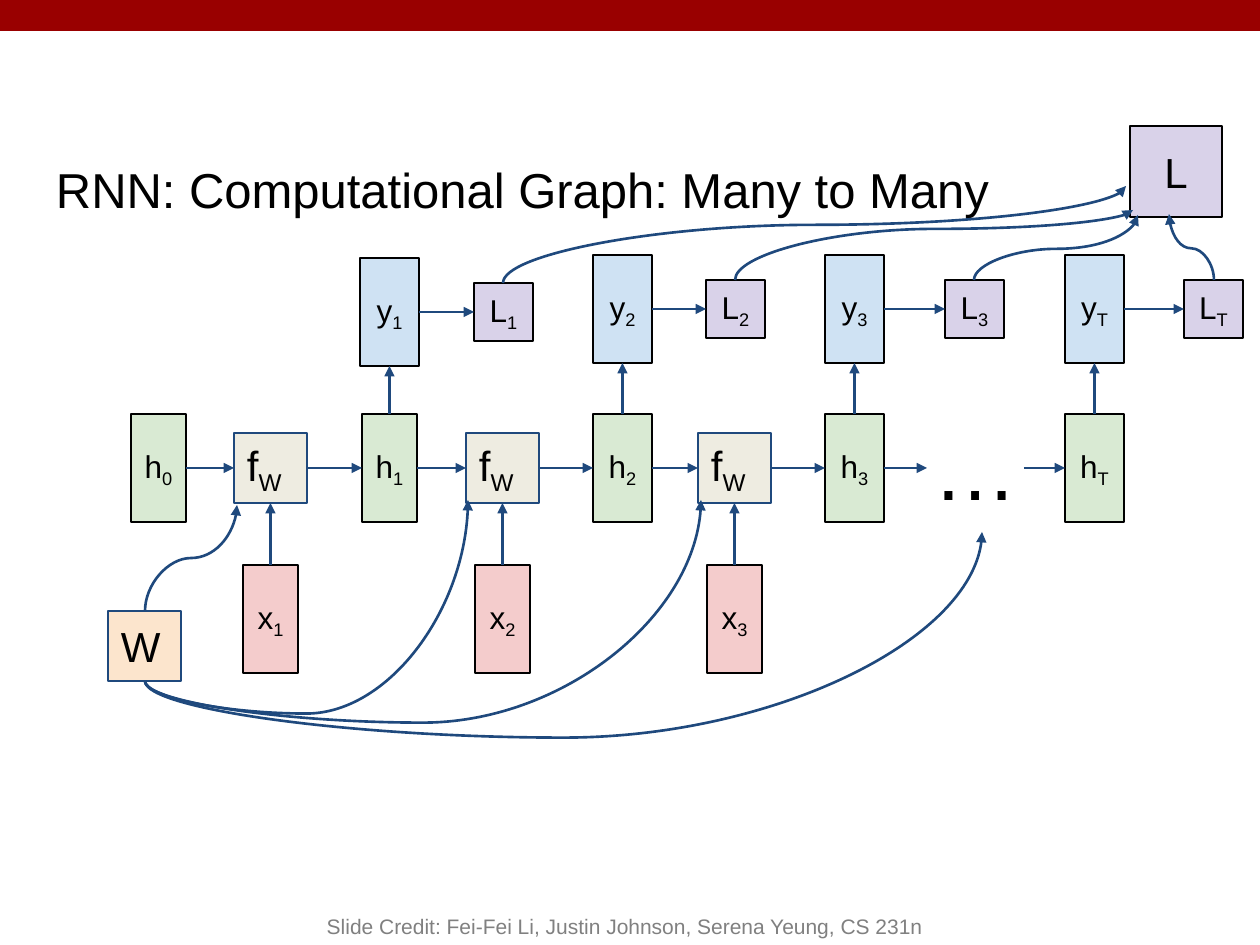
"""Build the many-to-many RNN computational graph slide."""
from lxml.etree import SubElement
from pptx import Presentation
from pptx.dml.color import RGBColor
from pptx.enum.shapes import MSO_CONNECTOR, MSO_SHAPE
from pptx.enum.text import MSO_ANCHOR, PP_ALIGN
from pptx.oxml.ns import qn
from pptx.util import Emu, Pt

PX = 914400 / 126
COLORS = {
    "banner": "990000", "hidden": "D9EAD3", "function": "EEECE1",
    "input": "F4CCCC", "output": "CFE2F3", "loss": "D9D2E9",
    "weight": "FCE5CD", "blue": "1F497D", "black": "000000", "gray": "808080",
}
COLORS = {name: RGBColor.from_string(value) for name, value in COLORS.items()}


def add_box(bounds, text, size, subscript="", fill=None, line="black", color="black",
            align=PP_ALIGN.CENTER, anchor=MSO_ANCHOR.MIDDLE, margin=13):
    place = [Emu(value * PX) for value in bounds]
    if fill:
        shape = slide.shapes.add_shape(MSO_SHAPE.RECTANGLE, *place)
        shape.shadow.inherit = False
        shape.fill.solid()
        shape.fill.fore_color.rgb = COLORS[fill]
        shape.line.color.rgb = COLORS[line]
        shape.line.width = Pt(0.75)
    else:
        shape = slide.shapes.add_textbox(*place)
    side = Emu(0 if align == PP_ALIGN.CENTER else margin * PX)
    edge = Emu(margin * PX)
    frame_format = {"word_wrap": True, "vertical_anchor": anchor, "margin_left": side,
                    "margin_right": side, "margin_top": edge, "margin_bottom": edge}
    for name, value in frame_format.items():
        setattr(shape.text_frame, name, value)
    paragraph = shape.text_frame.paragraphs[0]
    paragraph.alignment = align
    for part in filter(None, (text, subscript)):
        run = paragraph.add_run()
        run.text = part
        for name, value in {"name": "Arial", "size": Pt(size)}.items():
            setattr(run.font, name, value)
        run.font.color.rgb = COLORS[color]
    if subscript:
        run._r.get_or_add_rPr().set("baseline", "-25000")
    return shape


def add_arrow(kind, begin_x, begin_y, end_x, end_y):
    ends = [Emu(value * PX) for value in (begin_x, begin_y, end_x, end_y)]
    connector = slide.shapes.add_connector(kind, *ends)
    connector.line.color.rgb = COLORS["blue"]
    connector.line.width = Pt(1.5)
    SubElement(connector.line._get_or_add_ln(), qn("a:tailEnd"), type="triangle")
    SubElement(connector._element.spPr, qn("a:effectLst"))
    return connector


presentation = Presentation()
presentation.slide_width = Emu(1260 * PX)
presentation.slide_height = Emu(945 * PX)
slide = presentation.slides.add_slide(presentation.slide_layouts[6])

banner = slide.shapes.add_shape(MSO_SHAPE.RECTANGLE, 0, 0, presentation.slide_width, Emu(31 * PX))
banner.shadow.inherit = False
banner.fill.solid()
banner.fill.fore_color.rgb = COLORS["banner"]
banner.line.fill.background()

add_box((43, 130, 1134, 118), "RNN: Computational Graph: Many to Many", 28, align=PP_ALIGN.LEFT)
add_box((252, 882, 746, 63), "Slide Credit: Fei-Fei Li, Justin Johnson, Serena Yeung, CS 231n",
        12, color="gray", anchor=MSO_ANCHOR.BOTTOM, margin=6)
add_box((921, 404, 120, 127), "…", 48, align=PP_ALIGN.LEFT, anchor=MSO_ANCHOR.TOP)
add_box((1130, 126, 92, 91), "L", 24, fill="loss")
add_box((108, 611, 73, 70), "W", 24, fill="weight", line="blue", align=PP_ALIGN.LEFT)

hidden = {}
for step, left, width in (("0", 131, 55), ("1", 362, 55), ("2", 593, 59),
                          ("3", 825, 59), ("T", 1065, 59)):
    hidden[step] = add_box((left, 414, width, 108), "h", 18, step, "hidden")

links = []
for step, output_left, loss_left, middle in (("1", 360, 474, 312), ("2", 593, 706, 309),
                                             ("3", 825, 945, 309), ("T", 1065, 1184, 309)):
    output = add_box((output_left, middle - 54, 59, 108), "y", 18, step, "output")
    loss = add_box((loss_left, middle - 29, 59, 58), "L", 18, step, "loss")
    links += [(hidden[step], 0, output, 2), (output, 3, loss, 1)]

for index in range(3):
    left = 234 + 232 * index
    function = add_box((left, 433, 73, 70), "f", 24, "W", "function", "blue", align=PP_ALIGN.LEFT)
    entry = add_box((left + 9, 565, 55, 108), "x", 18, str(index + 1), "input")
    links += [(hidden[str(index)], 3, function, 1), (function, 3, hidden[str(index + 1)], 1),
              (entry, 0, function, 2)]

for source, source_site, target, target_site in links:
    arrow = add_arrow(MSO_CONNECTOR.STRAIGHT, 0, 0, 0, 0)
    arrow.begin_connect(source, source_site)
    arrow.end_connect(target, target_site)

add_arrow(MSO_CONNECTOR.STRAIGHT, 884, 468, 927, 468).begin_connect(hidden["3"], 3)
add_arrow(MSO_CONNECTOR.STRAIGHT, 1024, 468, 1065, 468).end_connect(hidden["T"], 1)

CURVES = (
    (145, 681, 468, 500, -0.18), (145, 611, 237, 505, 0.5),
    (145, 681, 701, 500, -0.23), (145, 681, 982, 532, -0.38),
    (503, 283, 1126, 186, 0.6), (735, 280, 1133, 210, 0.73),
    (974, 280, 1138, 215, 0.48), (1214, 280, 1169, 214, 0.48),
)
for begin_x, begin_y, end_x, end_y, bend in CURVES:
    center_x, center_y = (begin_x + end_x) / 2, (begin_y + end_y) / 2
    rightward = end_x > begin_x
    half_width = (begin_y - end_y) / 2 * (1 if rightward else -1)
    half_height = abs(end_x - begin_x) / 2
    curve = add_arrow(MSO_CONNECTOR.CURVE, center_x - half_width, center_y - half_height,
                      center_x + half_width, center_y + half_height)
    properties = curve._element.spPr
    properties.find(qn("a:xfrm")).set("rot", str((270 if rightward else 90) * 60000))
    geometry = properties.find(qn("a:prstGeom"))
    adjustments = geometry.find(qn("a:avLst"))
    if adjustments is None:
        adjustments = SubElement(geometry, qn("a:avLst"))
    SubElement(adjustments, qn("a:gd"), name="adj1", fmla=f"val {round(bend * 100000)}")

presentation.save("out.pptx")
